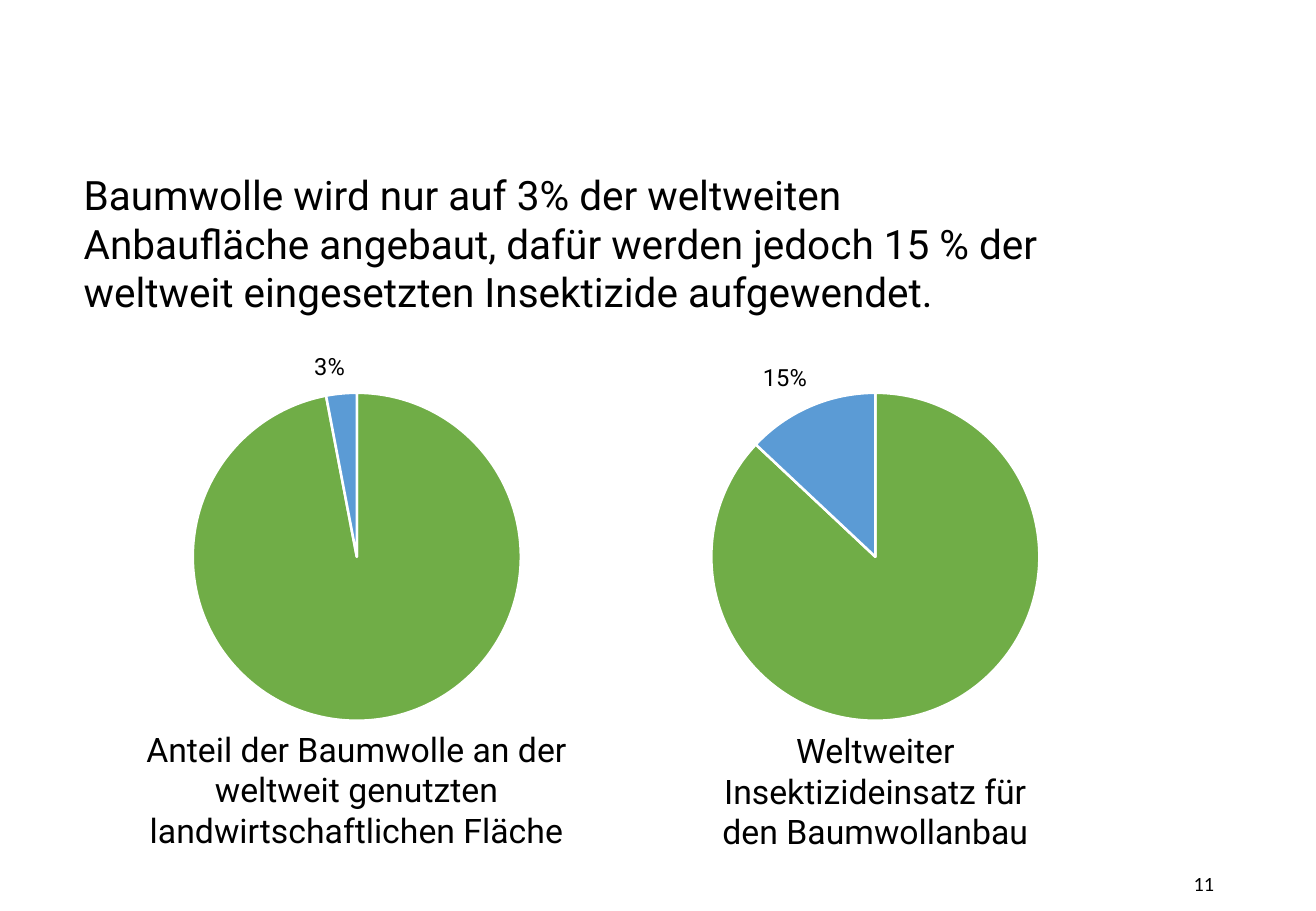
from dataclasses import dataclass

from lxml.etree import SubElement
from pptx import Presentation
from pptx.chart.data import CategoryChartData
from pptx.dml.color import RGBColor
from pptx.enum.chart import XL_CHART_TYPE
from pptx.enum.text import MSO_ANCHOR, PP_ALIGN
from pptx.oxml.ns import qn
from pptx.util import Cm, Pt


@dataclass(frozen=True)
class Theme:
    text_color: RGBColor = RGBColor(0x00, 0x00, 0x00)
    slice_border: RGBColor = RGBColor(0xFF, 0xFF, 0xFF)
    slice_colors: tuple = (RGBColor(0x70, 0xAD, 0x47), RGBColor(0x5B, 0x9B, 0xD5))
    text_font: str = "Roboto"
    number_font: str = "Calibri"
    statement_size: int = 24
    caption_size: int = 20
    label_size: int = 14
    number_size: int = 12
    chart_size: int = 10


def write_text(frame, text, *, font, size, color, align=PP_ALIGN.LEFT):
    paragraph = frame.paragraphs[0]
    paragraph.alignment = align
    run = paragraph.add_run()
    run.text = text
    run.font.name = font
    run.font.size = Pt(size)
    run.font.color.rgb = color


class SlideBuilder:
    def __init__(self, slide, theme):
        self.slide = slide
        self.theme = theme

    def text(self, text, left, top, width, height, size, *, font=None,
             align=PP_ALIGN.LEFT, anchor=MSO_ANCHOR.TOP, wrap=True):
        shape = self.slide.shapes.add_textbox(Cm(left), Cm(top), Cm(width), Cm(height))
        frame = shape.text_frame
        frame.word_wrap = wrap
        frame.vertical_anchor = anchor
        write_text(frame, text, font=font or self.theme.text_font, size=size,
                   color=self.theme.text_color, align=align)

    def pie(self, share, left, top, width, height, diameter):
        data = CategoryChartData()
        data.categories = ["1", "2"]
        data.add_series("Series 1", (100 - share, share))
        chart = self.slide.shapes.add_chart(
            XL_CHART_TYPE.PIE, Cm(left), Cm(top), Cm(width), Cm(height), data).chart
        chart.has_legend = False
        chart.has_title = False
        chart.font.name = self.theme.number_font
        chart.font.size = Pt(self.theme.chart_size)
        chart.font.color.rgb = self.theme.text_color
        plot = chart.plots[0]
        plot.vary_by_categories = True
        for index, color in enumerate(self.theme.slice_colors):
            point_format = plot.series[0].points[index].format
            point_format.fill.solid()
            point_format.fill.fore_color.rgb = color
            point_format.line.color.rgb = self.theme.slice_border
            point_format.line.width = Pt(1.5)
        self.center_plot(chart, diameter / width, diameter / height)

    def center_plot(self, chart, width_share, height_share):
        plot_area = chart.element.find(".//" + qn("c:plotArea"))
        layout = plot_area.find(qn("c:layout"))
        if layout is None:
            layout = SubElement(plot_area, qn("c:layout"))
            plot_area.insert(0, layout)
        manual = SubElement(layout, qn("c:manualLayout"))
        settings = {
            "layoutTarget": "inner", "xMode": "edge", "yMode": "edge",
            "x": (1 - width_share) / 2, "y": (1 - height_share) / 2,
            "w": width_share, "h": height_share,
        }
        for name, value in settings.items():
            SubElement(manual, qn("c:" + name)).set("val", str(value))


def main():
    presentation = Presentation()
    presentation.slide_width = Cm(27.51)
    presentation.slide_height = Cm(19.05)
    slide = presentation.slides.add_slide(presentation.slide_layouts[6])
    theme = Theme()
    builder = SlideBuilder(slide, theme)

    builder.text("11", 19.43, 17.96, 6.2, 1.02, theme.number_size,
                 font=theme.number_font, align=PP_ALIGN.RIGHT, anchor=MSO_ANCHOR.MIDDLE)
    builder.text("Baumwolle wird nur auf 3% der weltweiten Anbaufläche angebaut, dafür werden "
                 "jedoch 15 % der weltweit eingesetzten Insektizide aufgewendet.",
                 1.5, 3.43, 20.6, 3.33, theme.statement_size)

    for share, left in ((13, 12.52), (3, 1.68)):
        builder.pie(share, left, 7.85, 11.56, 7.59, diameter=6.86)

    captions = (
        ("Anteil der Baumwolle an der weltweit genutzten landwirtschaftlichen Fläche",
         2.54, 15.11, 9.83),
        ("Weltweiter Insektizideinsatz für den Baumwollanbau", 14.35, 15.14, 7.9),
    )
    for caption, left, top, width in captions:
        builder.text(caption, left, top, width, 3.68, theme.caption_size,
                     align=PP_ALIGN.CENTER)

    for label, left, top, width in (("3%", 6.32, 7.24, 1.27), ("15%", 15.7, 7.47, 1.6)):
        builder.text(label, left, top, width, 0.84, theme.label_size, wrap=False)

    presentation.save("out.pptx")


if __name__ == "__main__":
    main()
